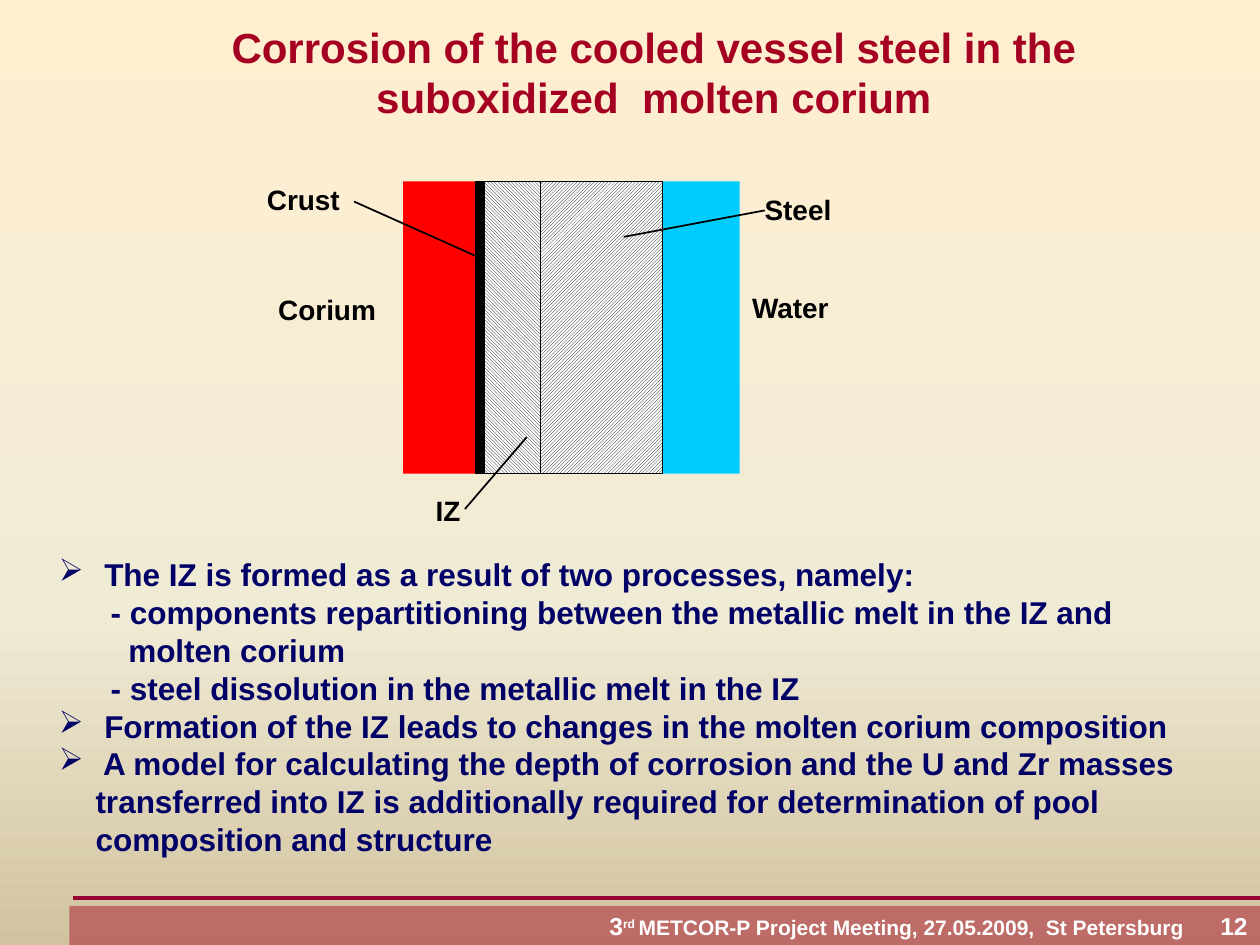
from lxml import etree
from pptx import Presentation
from pptx.dml.color import RGBColor
from pptx.enum import dml, shapes, text
from pptx.oxml import parse_xml
from pptx.oxml.ns import nsdecls, qn
from pptx.util import Inches, Pt

CRIMSON, NAVY, BLACK, WHITE = "A50021", "000066", "000000", "FFFFFF"


def rgb(code):
    return RGBColor.from_string(code)


def set_background(slide, stops):
    """Fill the slide from top to bottom with (percent, colour) stops."""
    fill = slide.background.fill
    fill.gradient()
    fill.gradient_angle = 270
    stop_list = slide.background._cSld.find(".//" + qn("a:gsLst"))
    for old in list(stop_list):
        stop_list.remove(old)
    for percent, code in stops:
        stop_list.append(parse_xml(
            f'<a:gs {nsdecls("a")} pos="{percent * 1000}"><a:srgbClr val="{code}"/></a:gs>'))


def style_run(run, size, color):
    run.font.name = "Arial"
    run.font.bold = True
    run.font.size = Pt(size)
    run.font.color.rgb = rgb(color)


def add_text(slide, box, words, size=16, color=BLACK, align=text.PP_ALIGN.LEFT,
             anchor=text.MSO_ANCHOR.TOP, wrap=True):
    """Add a text box; words is one string or a list of paragraphs."""
    frame = slide.shapes.add_textbox(*map(Inches, box)).text_frame
    frame.word_wrap = wrap
    frame.vertical_anchor = anchor
    for i, line in enumerate([words] if isinstance(words, str) else words):
        paragraph = frame.add_paragraph() if i else frame.paragraphs[0]
        paragraph.text = line
        paragraph.alignment = align
        for run in paragraph.runs:
            style_run(run, size, color)
    return frame


def add_block(slide, box, color=None, hatch=None):
    """Add a plain block, or a hatched one with a thin outline."""
    block = slide.shapes.add_shape(shapes.MSO_SHAPE.RECTANGLE, *map(Inches, box))
    block.shadow.inherit = False
    if hatch:
        block.fill.patterned()
        block.fill.pattern = hatch
        block.fill.fore_color.rgb = rgb(BLACK)
        block.fill.back_color.rgb = rgb(WHITE)
        block.line.color.rgb = rgb(BLACK)
        block.line.width = Pt(0.75)
    else:
        block.fill.solid()
        block.fill.fore_color.rgb = rgb(color)
        block.line.fill.background()
    return block


def add_line(slide, start, end, color=BLACK, width=1):
    line = slide.shapes.add_connector(
        shapes.MSO_CONNECTOR.STRAIGHT, *map(Inches, (*start, *end)))
    line.line.color.rgb = rgb(color)
    line.line.width = Pt(width)
    etree.SubElement(line._element.spPr, qn("a:effectLst"))


def add_footer(slide, left, top, width, height):
    add_line(slide, (left + 0.03, top - 0.06), (left + width, top - 0.06), "990033", 2.25)
    bar = add_block(slide, (left, top, width, height), CRIMSON)
    color = bar._element.spPr.find(qn("a:solidFill")).find(qn("a:srgbClr"))
    etree.SubElement(color, qn("a:alpha"), val="45000")

    frame = bar.text_frame
    frame.word_wrap = False
    frame.vertical_anchor = text.MSO_ANCHOR.MIDDLE
    frame.margin_right = Inches(0.6)
    meeting = frame.paragraphs[0]
    meeting.alignment = text.PP_ALIGN.RIGHT
    for words, size in (("3", 14), ("rd ", 12),
                        ("METCOR-P Project Meeting, 27.05.2009,  St Petersburg", 12)):
        run = meeting.add_run()
        run.text = words
        style_run(run, size, WHITE)
    meeting.runs[1].font._element.set("baseline", "30000")
    add_text(slide, (left + width - 0.6, top, 0.6, height), "12", 14, WHITE,
             text.PP_ALIGN.RIGHT, text.MSO_ANCHOR.MIDDLE)


def add_vessel_wall(slide, left, top, width, height):
    """Draw the layers from corium to water, with their labels and leaders."""
    side = 0.61
    steel_width = 0.97
    crust = left + side
    water = left + width - side
    zone = dml.MSO_PATTERN.LIGHT_DOWNWARD_DIAGONAL
    steel = dml.MSO_PATTERN.LIGHT_UPWARD_DIAGONAL
    add_block(slide, (crust, top, steel_width, height), hatch=zone)
    add_block(slide, (left, top, side, height), "FF0000")
    add_block(slide, (water, top, side, height), "00CCFF")
    add_block(slide, (water - steel_width, top, steel_width, height), hatch=steel)
    add_line(slide, (crust, top), (crust, top + height), width=6)

    labels = (("Crust", -1.18, -0.04, 0.78), ("Corium", -1.09, 0.83, 0.98),
              ("IZ", 0.16, 2.43, 0.4), ("Steel", 2.77, 0.04, 0.73),
              ("Water", 2.67, 0.82, 0.82))
    for words, dx, dy, label_width in labels:
        add_text(slide, (left + dx, top + dy, label_width, 0.37), words, wrap=False)

    leaders = (((-0.39, 0.16), (0.64, 0.62)),
               ((0.49, 2.6), (0.98, 2.03)),
               ((2.87, 0.23), (1.75, 0.44)))
    for ends in leaders:
        add_line(slide, *((left + dx, top + dy) for dx, dy in ends))


def add_conclusions(slide, box, items):
    """List (level, text) items: arrow bullets at level 0, dashes at level 1."""
    frame = add_text(slide, box, [words for _, words in items], 18, NAVY)
    for paragraph, (level, _) in zip(frame.paragraphs, items):
        margin, indent = ((0.29, -0.29), (0.55, -0.14))[level]
        properties = paragraph._p.get_or_add_pPr()
        properties.set("marL", str(Inches(margin)))
        properties.set("indent", str(Inches(indent)))
        if level == 0:
            etree.SubElement(properties, qn("a:buChar"), char="➢")


def main():
    deck = Presentation()
    deck.slide_width, deck.slide_height = Inches(10), Inches(7.5)
    slide = deck.slides.add_slide(deck.slide_layouts[6])
    set_background(slide, ((0, "FFEFD1"), (65, "F0EBD5"), (100, "D1C39F")))
    add_footer(slide, 0.55, 7.19, 9.45, 0.31)
    add_text(slide, (0.94, 0.22, 8.5, 0.7),
             "Corrosion of the cooled vessel steel in the suboxidized  molten corium",
             24, CRIMSON, text.PP_ALIGN.CENTER, text.MSO_ANCHOR.MIDDLE)
    add_vessel_wall(slide, 3.2, 1.44, 2.67, 2.32)
    add_conclusions(slide, (0.37, 4.36, 9.63, 2.5), (
        (0, " The IZ is formed as a result of two processes, namely:"),
        (1, "- components repartitioning between the metallic melt in the IZ and"
            "\vmolten corium"),
        (1, "- steel dissolution in the metallic melt in the IZ"),
        (0, " Formation of the IZ leads to changes in the molten corium composition"),
        (0, " A model for calculating the depth of corrosion and the U and Zr masses "
            "transferred into IZ is additionally required for determination of pool "
            "composition and structure"),
    ))
    deck.save("out.pptx")


if __name__ == "__main__":
    main()
